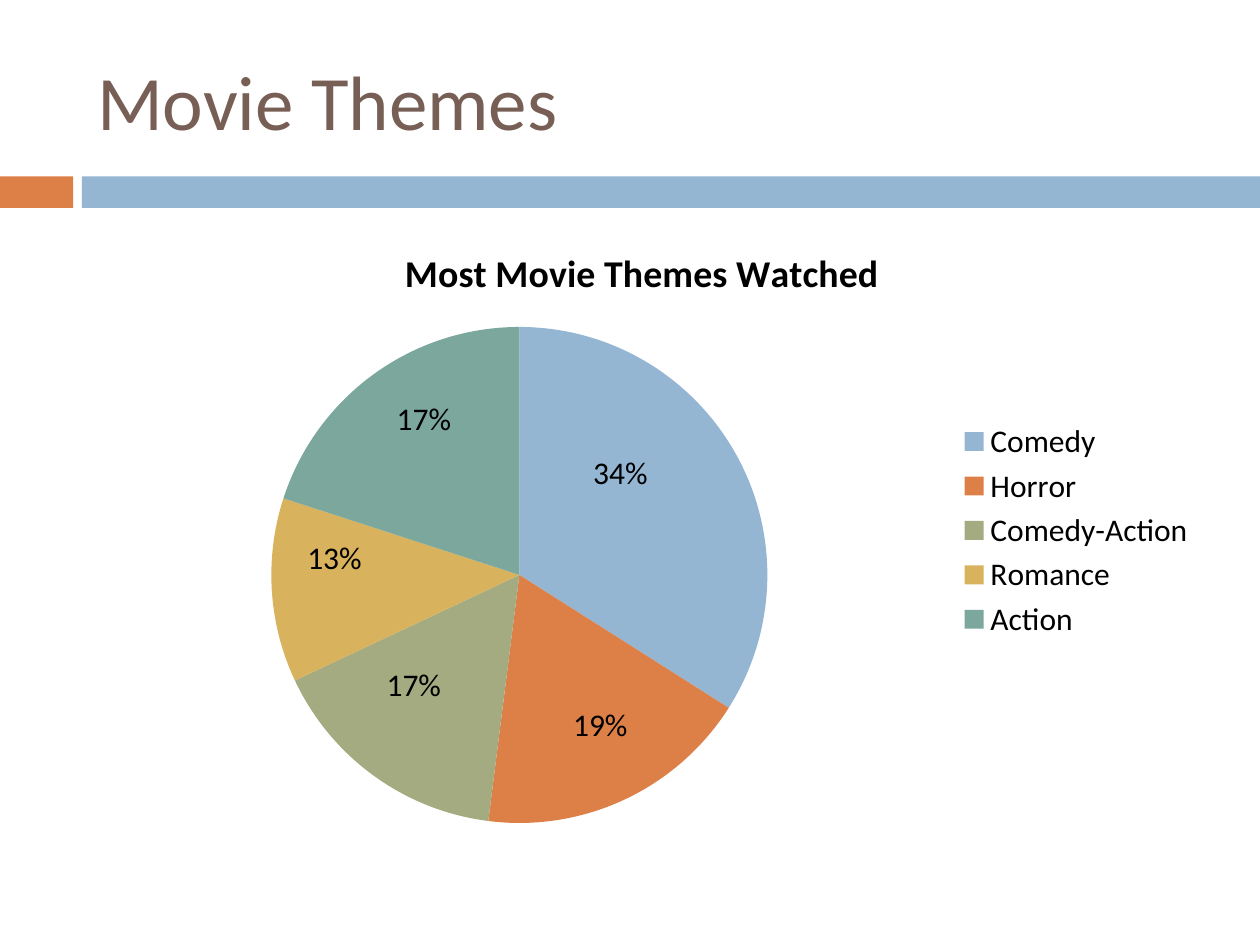
from dataclasses import dataclass

from pptx import Presentation
from pptx.chart.data import CategoryChartData
from pptx.dml.color import RGBColor as RGB
from pptx.enum.chart import XL_CHART_TYPE as CT, XL_LEGEND_POSITION as LP
from pptx.enum.shapes import MSO_SHAPE as SHAPE
from pptx.enum.text import MSO_ANCHOR as ANCHOR, MSO_AUTO_SIZE as FIT, PP_ALIGN as ALIGN
from pptx.util import Inches, Pt


@dataclass(frozen=True)
class Theme:
    """Colours, font and type sizes of the slide."""
    font: str = "Calibri"
    title: str = "775F55"
    text: str = "000000"
    blue: str = "94B6D2"
    orange: str = "DD8047"
    olive: str = "A5AB81"
    gold: str = "D8B25C"
    teal: str = "7BA79D"
    title_size: float = 44
    chart_title_size: float = 21.6
    body_size: float = 18


T = Theme()
THEMES = [
    ("Comedy", 34, T.blue),
    ("Horror", 18, T.orange),
    ("Comedy-Action", 16, T.olive),
    ("Romance", 12, T.gold),
    ("Action", 20, T.teal),
]
LABELS = [
    ("34%", 3.94, 1.8, 0.78),
    ("19%", 3.78, 3.8, 0.78),
    ("17%", 2.3, 3.48, 0.87),
    ("13%", 1.67, 2.47, 0.78),
    ("17%", 2.38, 1.37, 0.78),
]


def style_font(font, size, color, bold=False):
    """Apply the theme font with a size, colour and weight."""
    font.name, font.size, font.bold = T.font, Pt(size), bold
    font.color.rgb = RGB.from_string(color)


def add_run(p, text, size, color, bold=False):
    """Add one styled run to a paragraph."""
    r = p.add_run()
    r.text = text
    style_font(r.font, size, color, bold)


def add_title(s, x, y, w, h):
    """Place and format the title placeholder."""
    sp = s.shapes.title
    sp.left, sp.top, sp.width, sp.height = map(Inches, (x, y, w, h))
    tf = sp.text_frame
    tf.vertical_anchor = ANCHOR.MIDDLE
    p = tf.paragraphs[0]
    p.alignment = ALIGN.LEFT
    add_run(p, "Movie Themes", T.title_size, T.title)


def add_band(s, x, y, w, h, accent=0.58, gap=0.07):
    """Draw the two-part band below the title."""
    rest = accent + gap
    for left, width, color in ((x, accent, T.orange), (x + rest, w - rest, T.blue)):
        sp = s.shapes.add_shape(SHAPE.RECTANGLE, Inches(left), Inches(y), Inches(width), Inches(h))
        sp.shadow.inherit = False
        sp.fill.solid()
        sp.fill.fore_color.rgb = RGB.from_string(color)
        sp.line.fill.background()


def add_pie(s, x, y, w, h):
    """Add the pie chart with its title and legend."""
    data = CategoryChartData()
    data.categories = [name for name, _, _ in THEMES]
    data.add_series("Series 1", [value for _, value, _ in THEMES])
    chart = s.shapes.add_chart(CT.PIE, Inches(x), Inches(y), Inches(w), Inches(h), data).chart
    style_font(chart.font, T.body_size, T.text)
    chart.has_title = True
    p = chart.chart_title.text_frame.paragraphs[0]
    add_run(p, "Most Movie Themes Watched ", T.chart_title_size, T.text, True)
    chart.has_legend = True
    chart.legend.position = LP.RIGHT
    chart.legend.include_in_layout = False
    plot = chart.plots[0]
    plot.vary_by_categories = True
    for i, (_, _, color) in enumerate(THEMES):
        fill = plot.series[0].points[i].format.fill
        fill.solid()
        fill.fore_color.rgb = RGB.from_string(color)


def add_labels(s, x, y, h=0.4):
    """Set the percentages over the slices, offset from the chart corner."""
    for text, dx, dy, w in LABELS:
        sp = s.shapes.add_textbox(Inches(x + dx), Inches(y + dy), Inches(w), Inches(h))
        tf = sp.text_frame
        tf.word_wrap = True
        tf.auto_size = FIT.SHAPE_TO_FIT_TEXT
        add_run(tf.paragraphs[0], text, T.body_size, T.text)


def main():
    """Build and save the slide."""
    prs = Presentation()
    prs.slide_width, prs.slide_height = Inches(10), Inches(7.5)
    s = prs.slides.add_slide(prs.slide_layouts[5])
    left, width, chart_top = 0.67, 8.92, 1.75
    add_band(s, 0, 1.4, 10, 0.25)
    add_title(s, left, 0.25, width, 1.08)
    add_pie(s, left, chart_top, width, 4.92)
    add_labels(s, left, chart_top)
    prs.save("out.pptx")


if __name__ == "__main__":
    main()
